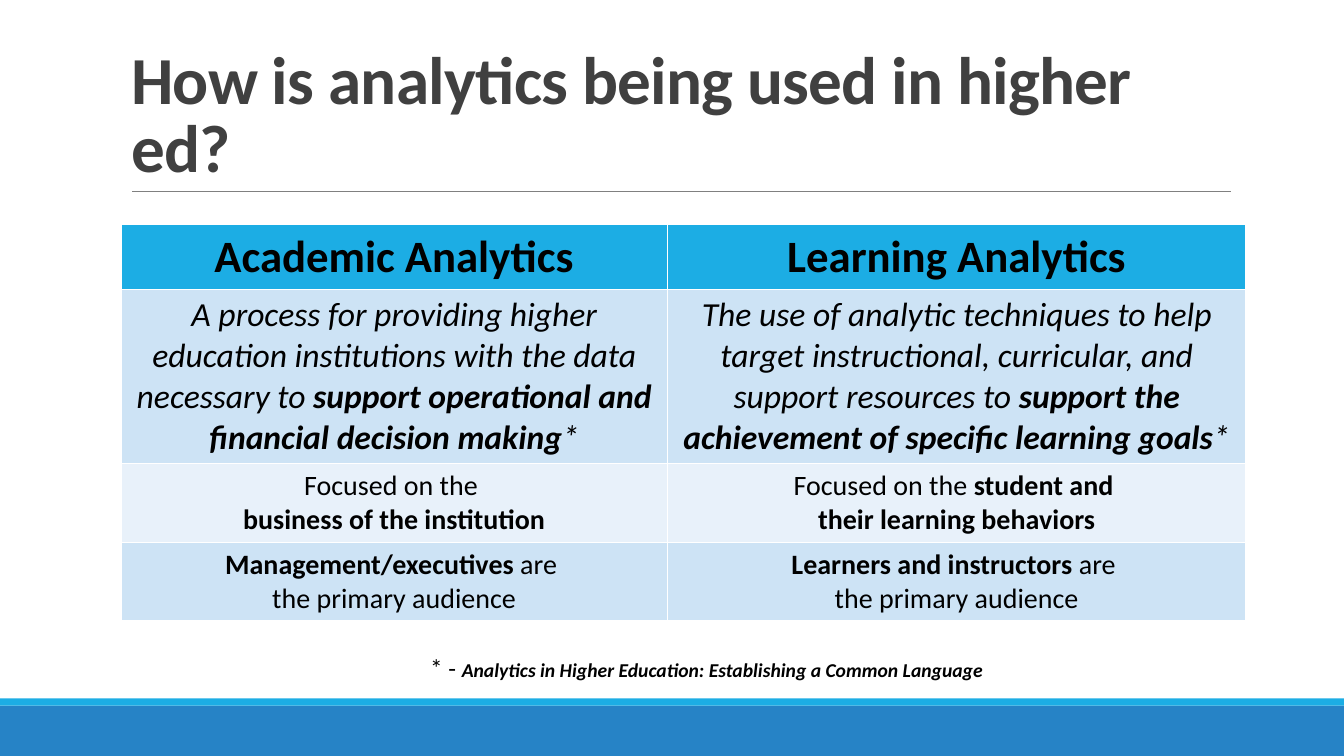
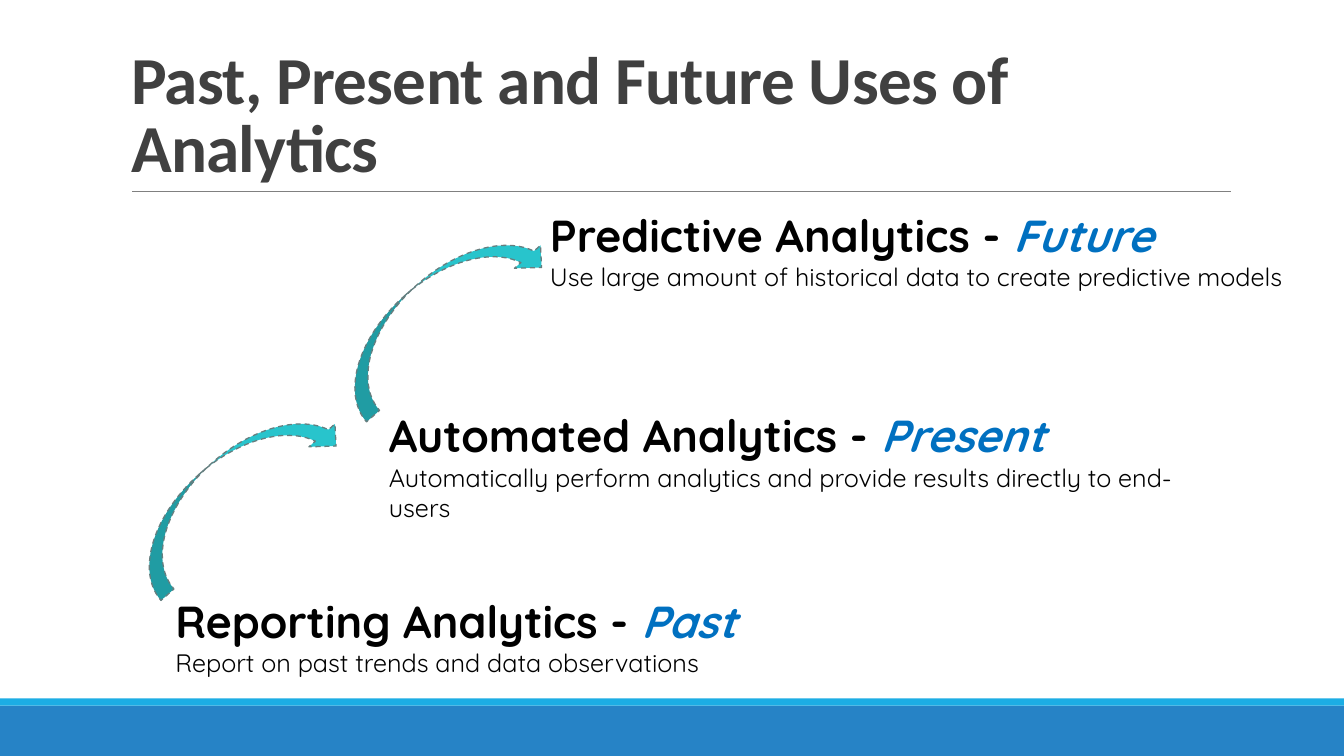
import pptx
import pptx.util
import pptx.dml.color
import pptx.enum.dml
import pptx.enum.shapes
import pptx.enum.text
import pptx.oxml

Cm = pptx.util.Cm
Pt = pptx.util.Pt
SHAPE = pptx.enum.shapes.MSO_SHAPE
ALIGN = pptx.enum.text.PP_ALIGN

DARK_BLUE, SKY, PALE, PALER = "2683C6", "1CADE4", "CDE3F5", "E8F1FA"
GREY, RULE, BLACK, ACCENT = "404040", "808080", "000000", "0070C0"
TEAL, TEAL_EDGE = "28C4CC", "667E7F"
EFFECTS = '<a:effectLst xmlns:a="http://schemas.openxmlformats.org/drawingml/2006/main"/>'


def color(value):
    return pptx.dml.color.RGBColor.from_string(value)


def add_text(p, text, size, style="", font="Calibri", fill=BLACK):
    for i, line in enumerate(text.split("\n")):
        if i:
            p.add_line_break()
        if line:
            r = p.add_run()
            r.text = line
            r.font.size = Pt(size)
            r.font.name = font
            r.font.bold = "b" in style
            r.font.italic = "i" in style
            r.font.color.rgb = color(fill)


prs = pptx.Presentation()
prs.slide_width, prs.slide_height = Cm(33.87), Cm(19.05)
layout = prs.slide_layouts[5]

titles = ["How is analytics being used in higher ed?",
          "Past, Present and Future Uses of Analytics"]
for title in titles:
    s = prs.slides.add_slide(layout)
    sp = s.shapes.title
    sp.left, sp.top, sp.width, sp.height = Cm(3.05), Cm(0.79), Cm(27.94), Cm(4.04)
    tf = sp.text_frame
    tf.auto_size = pptx.enum.text.MSO_AUTO_SIZE.NONE
    tf.vertical_anchor = pptx.enum.text.MSO_ANCHOR.BOTTOM
    p = tf.paragraphs[0]
    p.alignment = ALIGN.LEFT
    p.line_spacing = 0.85
    add_text(p, title, 48, "b", fill=GREY)
    p.runs[0].font._element.set("spc", "-50")
compare, timeline = prs.slides

shared = []
for top, height, fill in [(17.78, 1.27, DARK_BLUE), (17.6, 0.18, SKY)]:
    sp = compare.shapes.add_shape(SHAPE.RECTANGLE, 0, Cm(top), prs.slide_width, Cm(height))
    sp.shadow.inherit = False
    sp.fill.solid()
    sp.fill.fore_color.rgb = color(fill)
    sp.line.fill.background()
    shared.append(sp)
rule = compare.shapes.add_connector(
    pptx.enum.shapes.MSO_CONNECTOR.STRAIGHT, Cm(3.33), Cm(4.83), Cm(31.01), Cm(4.83))
rule.line.color.rgb = color(RULE)
rule.line.width = Pt(0.5)
rule._element.spPr.append(pptx.oxml.parse_xml(EFFECTS))
shared.append(rule)
for i, sp in enumerate(shared):
    sp._element.xpath(".//p:cNvPr")[0].set("id", str(101 + i))
    layout.shapes.element.insert(2 + i, sp._element)

rows = [
    (1.63, SKY, 32, [
        [("Academic Analytics", "b")],
        [("Learning Analytics", "b")]]),
    (4.3, PALE, 24, [
        [("A process for providing higher education institutions with the data necessary to ", "i"),
         ("support operational and financial decision making", "bi"), ("*", "i")],
        [("The use of analytic techniques to help target instructional, curricular, "
          "and support resources to ", "i"),
         ("support the achievement of specific learning goals", "bi"), ("*", "i")]]),
    (1.95, PALER, 20, [
        [("Focused on the \n", ""), ("business of the institution", "b")],
        [("Focused on the ", ""), ("student and \ntheir learning behaviors", "b")]]),
    (1.95, PALE, 20, [
        [("Management/executives", "b"), (" are \nthe primary audience", "")],
        [("Learners and instructors ", "b"), ("are \nthe primary audience", "")]]),
]
widths = [13.77, 14.58]
table = compare.shapes.add_table(len(rows), len(widths), Cm(3.05), Cm(5.66),
                                 Cm(sum(widths)), Cm(sum(row[0] for row in rows))).table
for column, width in zip(table.columns, widths):
    column.width = Cm(width)
for i, (height, fill, size, cells) in enumerate(rows):
    table.rows[i].height = Cm(height)
    for j, runs in enumerate(cells):
        cell = table.cell(i, j)
        cell.fill.solid()
        cell.fill.fore_color.rgb = color(fill)
        p = cell.text_frame.paragraphs[0]
        p.alignment = ALIGN.CENTER
        for text, style in runs:
            add_text(p, text, size, style)

tf = compare.shapes.add_textbox(Cm(10.59), Cm(16.31), Cm(17.35), Cm(1.02)).text_frame
tf.word_wrap = True
add_text(tf.paragraphs[0], "* - ", 18)
add_text(tf.paragraphs[0], "Analytics in Higher Education: Establishing a Common Language", 14, "bi")

stages = [
    (4.17, 14.83, 22.48, 2.39, "Reporting", "Past",
     "Report on past trends and data observations"),
    (9.55, 10.16, 21.18, 3.18, "Automated", "Present",
     "Automatically perform analytics and provide results directly to end-users"),
    (13.61, 5.11, 18.97, 4.52, "Predictive", "Future",
     "Use large amount of historical data to create predictive models"),
]
for left, top, width, height, name, period, detail in stages:
    tf = timeline.shapes.add_textbox(Cm(left), Cm(top), Cm(width), Cm(height)).text_frame
    tf.word_wrap = True
    p = tf.paragraphs[0]
    add_text(p, f"{name} Analytics - ", 32, "b", "Quicksand")
    add_text(p, period, 32, "bi", "Quicksand", ACCENT)
    add_text(tf.add_paragraph(), detail, 18, "", "Quicksand")

for left, top in [(2.69, 11.51), (7.87, 7.01)]:
    sp = timeline.shapes.add_shape(SHAPE.CURVED_DOWN_ARROW, Cm(left), Cm(top), Cm(6.32), Cm(1.75))
    sp.rotation = 318.6
    sp.shadow.inherit = False
    sp.fill.solid()
    sp.fill.fore_color.rgb = color(TEAL)
    sp.line.color.rgb = color(TEAL_EDGE)
    sp.line.width = Pt(0.9)
    sp.line.dash_style = pptx.enum.dml.MSO_LINE.DASH

prs.save("out.pptx")
